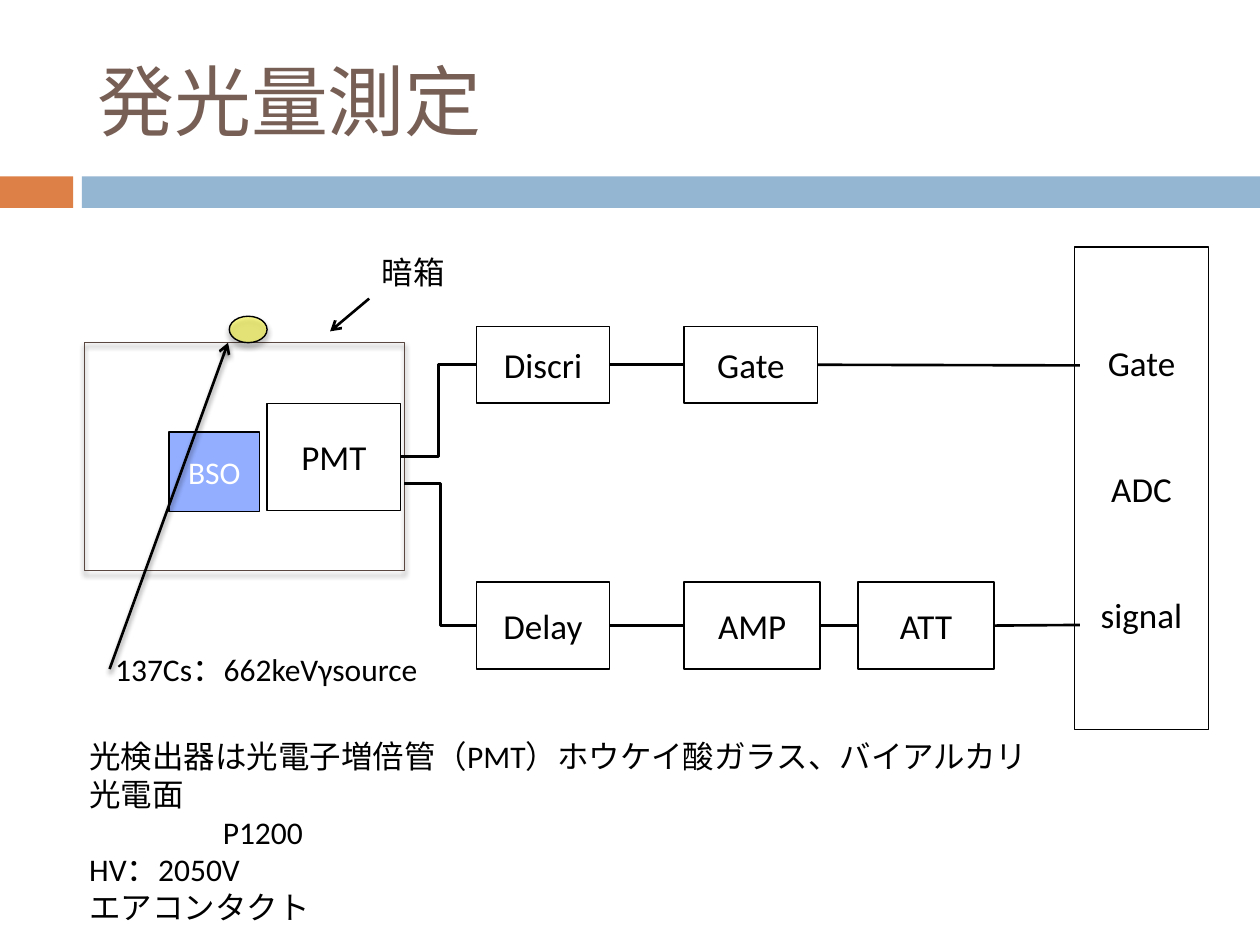
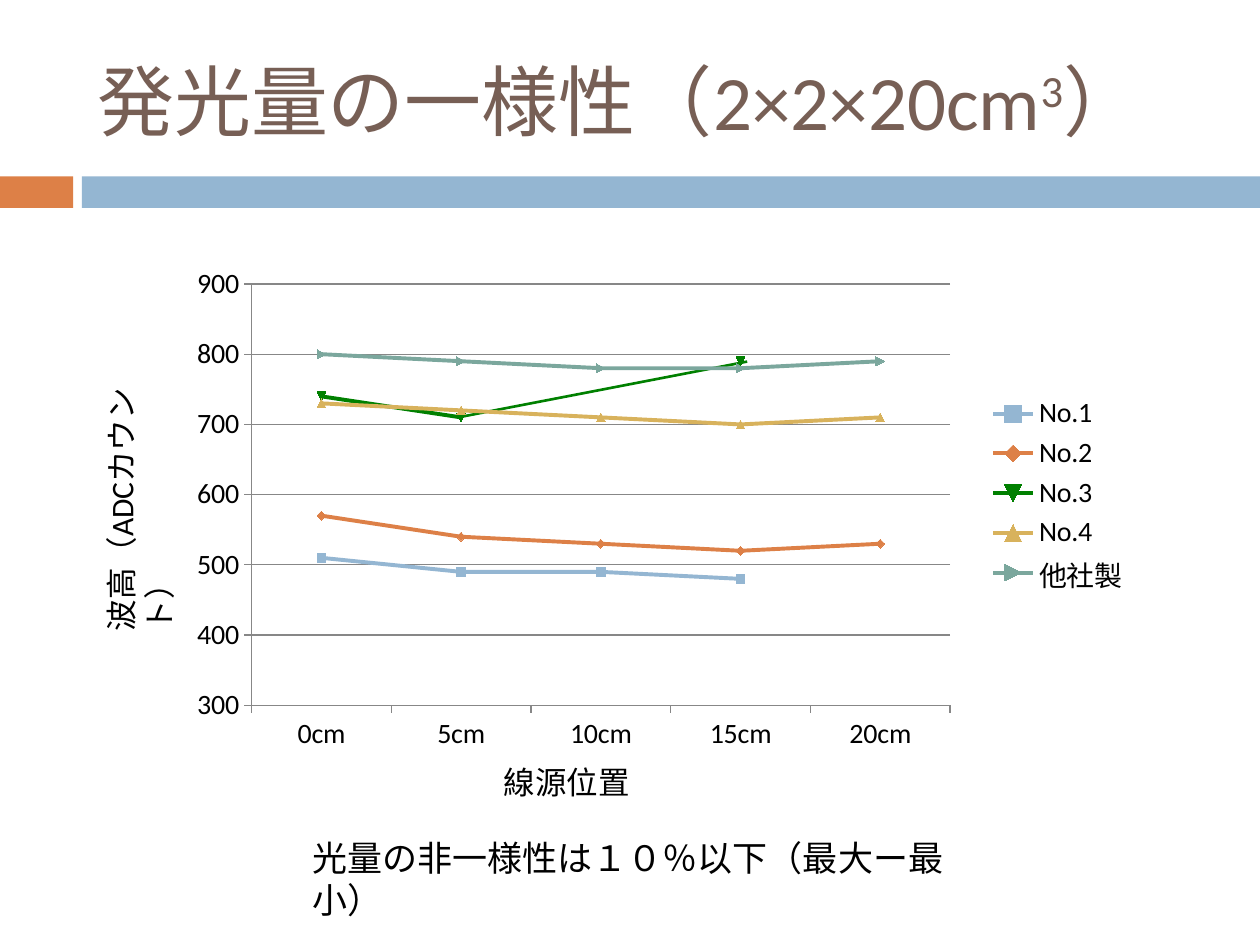
from dataclasses import dataclass

from lxml.etree import SubElement
from pptx import Presentation
from pptx.chart.data import CategoryChartData
from pptx.dml.color import RGBColor
from pptx.enum.chart import XL_CHART_TYPE as ChartType, XL_LEGEND_POSITION as LegendPos
from pptx.enum.chart import XL_TICK_MARK as Tick
from pptx.enum.shapes import MSO_CONNECTOR as Link, MSO_SHAPE as Shape
from pptx.enum.text import MSO_ANCHOR as Anchor, MSO_AUTO_SIZE as AutoSize, PP_ALIGN as Align
from pptx.oxml import parse_xml
from pptx.oxml.ns import nsdecls, qn
from pptx.util import Inches, Pt


@dataclass(frozen=True)
class Theme:
    font: str = "Calibri"
    ink: str = "000000"
    title: str = "775F55"
    orange: str = "DD8047"
    blue: str = "94B6D2"
    crystal: str = "3366FF"
    source: str = "FFFF00"
    dark_box: str = "594740"
    white: str = "FFFFFF"
    green: str = "008000"
    grid: str = "878787"
    series: tuple = ("94B6D2", "DD8047", "008000", "D8B25C", "7BA79D")
    title_size: int = 44
    label_size: int = 20
    text_size: int = 18
    chart_size: int = 16
    thin: float = 0.79
    wire: float = 1.5


@dataclass(frozen=True)
class Box:
    x: float
    y: float
    w: float
    h: float

    def inner(self, dx, dy, w, h):
        return Box(self.x + dx, self.y + dy, w, h)

    def inches(self):
        return [Inches(round(v, 2)) for v in (self.x, self.y, self.w, self.h)]


THEME = Theme()
TOP, LEFT, BOTTOM, RIGHT = range(4)


# Shared helpers
def rgb(color):
    return RGBColor.from_string(color)


def style_font(font, size, color=THEME.ink):
    font.name, font.size, font.color.rgb = THEME.font, Pt(size), rgb(color)


def add_run(paragraph, text, size, color=THEME.ink):
    run = paragraph.add_run()
    run.text = text
    style_font(run.font, size, color)
    return run


def add_shadow(shape):
    effects = shape.element.spPr.find(qn("a:effectLst"))
    effects.append(parse_xml(
        f'<a:outerShdw {nsdecls("a")} blurRad="38100" dist="30480" dir="5400000" rotWithShape="0">'
        f'<a:srgbClr val="{THEME.ink}"><a:alpha val="45000"/></a:srgbClr></a:outerShdw>'))


def add_block(slide, box, texts=(), kind=Shape.RECTANGLE, fill=None, opacity=100,
              line=THEME.ink, size=THEME.label_size, color=THEME.ink, gap=0):
    block = slide.shapes.add_shape(kind, *box.inches())
    block.shadow.inherit = False
    if fill:
        block.fill.solid()
        block.fill.fore_color.rgb = rgb(fill)
        if opacity < 100:
            tint = block.element.spPr.find(f".//{qn('a:srgbClr')}")
            SubElement(tint, qn("a:alpha"), val=str(opacity * 1000))
    else:
        block.fill.background()
    if line:
        block.line.color.rgb = rgb(line)
        block.line.width = Pt(THEME.thin)
    else:
        block.line.fill.background()
    frame = block.text_frame
    frame.vertical_anchor = Anchor.MIDDLE
    for i, text in enumerate(texts):
        paragraph = frame.add_paragraph() if i else frame.paragraphs[0]
        paragraph.alignment = Align.CENTER
        paragraph.space_before = Pt(gap if i else 0)
        add_run(paragraph, text, size, color)
    return block


def add_wire(slide, start, end, kind=Link.STRAIGHT, color=THEME.ink, arrow=False,
             begin=None, finish=None):
    wire = slide.shapes.add_connector(kind, *(Inches(round(v, 2)) for v in (*start, *end)))
    wire.line.color.rgb = rgb(color)
    wire.line.width = Pt(THEME.wire)
    if arrow:
        SubElement(wire.line._get_or_add_ln(), qn("a:tailEnd"), type="arrow")
    SubElement(wire.element.spPr, qn("a:effectLst"))
    if begin:
        wire.begin_connect(begin, RIGHT)
    if finish:
        wire.end_connect(finish, LEFT)
    return wire


def add_text(slide, box, lines, size=THEME.text_size, wrap=False):
    label = slide.shapes.add_textbox(*box.inches())
    frame = label.text_frame
    frame.word_wrap = wrap
    frame.auto_size = AutoSize.SHAPE_TO_FIT_TEXT
    for i, text in enumerate(lines):
        add_run(frame.add_paragraph() if i else frame.paragraphs[0], text, size)
    return label


# Layout: title place and the two bands
def prepare_layout(layout, slide):
    title = layout.placeholders[0]
    title.left, title.top, title.width, title.height = Box(0.67, 0.25, 8.92, 1.08).inches()
    for band, color in ((Box(0, 1.4, 0.58, 0.25), THEME.orange),
                        (Box(0.65, 1.4, 9.35, 0.25), THEME.blue)):
        layout.shapes.element.append(add_block(slide, band, fill=color, line=None).element)


def set_title(slide, parts):
    frame = slide.shapes.title.text_frame
    frame.vertical_anchor = Anchor.MIDDLE
    paragraph = frame.paragraphs[0]
    paragraph.alignment = Align.LEFT
    for text, raised in parts:
        run = add_run(paragraph, text, THEME.title_size, THEME.title)
        if raised:
            run._r.get_or_add_rPr().set("baseline", "30000")


# Dark box with crystal, photomultiplier and source
def draw_detector(slide, box):
    add_block(slide, box.inner(0.67, 0.71, 0.72, 0.63), ["BSO"], fill=THEME.crystal,
              opacity=53, size=THEME.text_size, color=THEME.white)
    pmt = add_block(slide, box.inner(1.45, 0.48, 1.06, 0.85), ["PMT"])
    add_shadow(add_block(slide, box, line=THEME.dark_box))
    add_shadow(add_block(slide, box.inner(1.15, -0.21, 0.3, 0.21), kind=Shape.OVAL,
                         fill=THEME.source, opacity=42))
    add_shadow(add_wire(slide, (box.x + 0.2, box.y + 2.59), (box.x + 1.14, box.y), arrow=True))
    add_text(slide, box.inner(0.09, 2.39, 2.73, 0.4), [" 137Cs：662keVγsource"])
    add_wire(slide, (box.x + 2.26, box.y - 0.35), (box.x + 1.95, box.y - 0.09), arrow=True)
    add_text(slide, box.inner(2.26, -0.76, 1, 0.4), ["暗箱"], wrap=True)
    return pmt


# One row of modules, wired from left to right
def draw_chain(slide, box, modules, adc_x):
    previous, middle = None, box.y + box.h / 2
    for name, dx, width in modules:
        module = add_block(slide, box.inner(dx, 0, width, box.h), [name])
        if previous:
            add_wire(slide, (0, 0), (1, 1), begin=previous, finish=module)
        else:
            first = module
        previous = module
    add_wire(slide, (0, 0), (adc_x, middle), begin=previous)
    return first


def draw_circuit(slide, box):
    detector = box.inner(0, 0.76, 2.54, 1.81)
    pmt = draw_detector(slide, detector)
    adc = box.inner(7.86, 0, 1.06, box.h)
    add_block(slide, adc, ["Gate", "ADC", "signal"], gap=48)
    adc_x = adc.x + 0.04
    discri = draw_chain(slide, box.inner(3.11, 0.63, 4.11, 0.61),
                        [("Discri", 0, 1.06), ("Gate", 1.65, 1.06)], adc_x)
    delay = draw_chain(slide, box.inner(3.11, 2.66, 4.11, 0.69),
                       [("Delay", 0, 1.06), ("AMP", 1.65, 1.08), ("ATT", 3.03, 1.08)], adc_x)
    add_wire(slide, (0, 0), (1, 1), Link.ELBOW, begin=pmt, finish=discri)
    add_wire(slide, (detector.x + detector.w, box.y + 1.88), (box.x + 3.11, box.y + 3),
             Link.ELBOW, finish=delay)


def draw_conditions(slide, box):
    notes = add_text(slide, box, [
        "光検出器は光電子増倍管（PMT）ホウケイ酸ガラス、バイアルカリ光電面",
        "P1200", "HV：2050V", "エアコンタクト"])
    model = notes.text_frame.paragraphs[1]
    model._p.get_or_add_pPr().set("marL", str(Inches(1.06)))


# Line chart with its axis captions
def set_plot_area(chart, x, y, w, h):
    plot_area = chart.element.find(f".//{qn('c:plotArea')}")
    old = plot_area.find(qn("c:layout"))
    if old is not None:
        plot_area.remove(old)
    plot_area.insert(0, parse_xml(
        f'<c:layout {nsdecls("c")}><c:manualLayout><c:layoutTarget val="inner"/>'
        '<c:xMode val="edge"/><c:yMode val="edge"/>'
        f'<c:x val="{x}"/><c:y val="{y}"/><c:w val="{w}"/><c:h val="{h}"/>'
        '</c:manualLayout></c:layout>'))


def draw_uniformity_chart(slide, box):
    data = CategoryChartData()
    data.categories = ["0cm", "5cm", "10cm", "15cm", "20cm"]
    for name, heights in (("No.1", (510, 490, 490, 480, None)),
                          ("No.2", (570, 540, 530, 520, 530)),
                          ("No.3", (740, 710, None, 790, None)),
                          ("No.4", (730, 720, 710, 700, 710)),
                          ("他社製", (800, 790, 780, 780, 790))):
        data.add_series(name, heights)
    # Bridge over the missing No.3 point
    add_wire(slide, (box.x + 2.5, box.y + 1.46), (box.x + 4.78, box.y + 1.02), color=THEME.green)
    chart = slide.shapes.add_chart(ChartType.LINE_MARKERS, *box.inches(), data).chart
    style_font(chart.font, THEME.chart_size)
    chart.has_title = False
    chart.has_legend = True
    chart.legend.position = LegendPos.RIGHT
    chart.legend.include_in_layout = False
    style_font(chart.legend.font, THEME.chart_size)
    set_plot_area(chart, 0.107, 0.097, 0.701, 0.802)
    heights_axis = chart.value_axis
    heights_axis.minimum_scale, heights_axis.maximum_scale = 300, 900
    heights_axis.major_unit = 100
    for axis in (chart.category_axis, heights_axis):
        axis.major_tick_mark = Tick.OUTSIDE
        style_font(axis.tick_labels.font, THEME.chart_size)
        axis.format.line.color.rgb = rgb(THEME.grid)
    heights_axis.major_gridlines.format.line.color.rgb = rgb(THEME.grid)
    chart.plots[0].vary_by_categories = False
    for sample, color in zip(chart.plots[0].series, THEME.series):
        sample.smooth = False
        sample.format.line.color.rgb = rgb(color)
        sample.format.line.width = Pt(2.25)
        marker = sample.marker.format
        marker.fill.solid()
        marker.fill.fore_color.rgb = rgb(color)
        marker.line.color.rgb = rgb(color)
    # Axis captions
    add_text(slide, box.inner(2.75, 4.16, 1.21, 0.4), ["線源位置"])
    add_text(slide, box.inner(-1.31, 1.94, 2.24, 0.4), ["波高（ADCカウント）"]).rotation = 270


def build_setup_slide(slide):
    set_title(slide, [("発光量測定", False)])
    draw_circuit(slide, Box(0.67, 1.96, 8.92, 3.83))
    draw_conditions(slide, Box(0.61, 5.8, 7.75, 1.31))


def build_uniformity_slide(slide):
    set_title(slide, [("発光量の一様性（2×2×20cm", False), ("3", True), ("）", False)])
    draw_uniformity_chart(slide, Box(1.15, 1.85, 7.91, 4.17))
    add_text(slide, Box(2.38, 6.59, 5.34, 0.44),
             ["光量の非一様性は１０％以下（最大ー最小）"], THEME.label_size)


def main():
    deck = Presentation()
    deck.slide_width, deck.slide_height = Inches(10), Inches(7.5)
    layout = deck.slide_layouts[5]
    setup, uniformity = (deck.slides.add_slide(layout) for _ in range(2))
    prepare_layout(layout, setup)
    build_setup_slide(setup)
    build_uniformity_slide(uniformity)
    deck.save("out.pptx")


if __name__ == "__main__":
    main()
